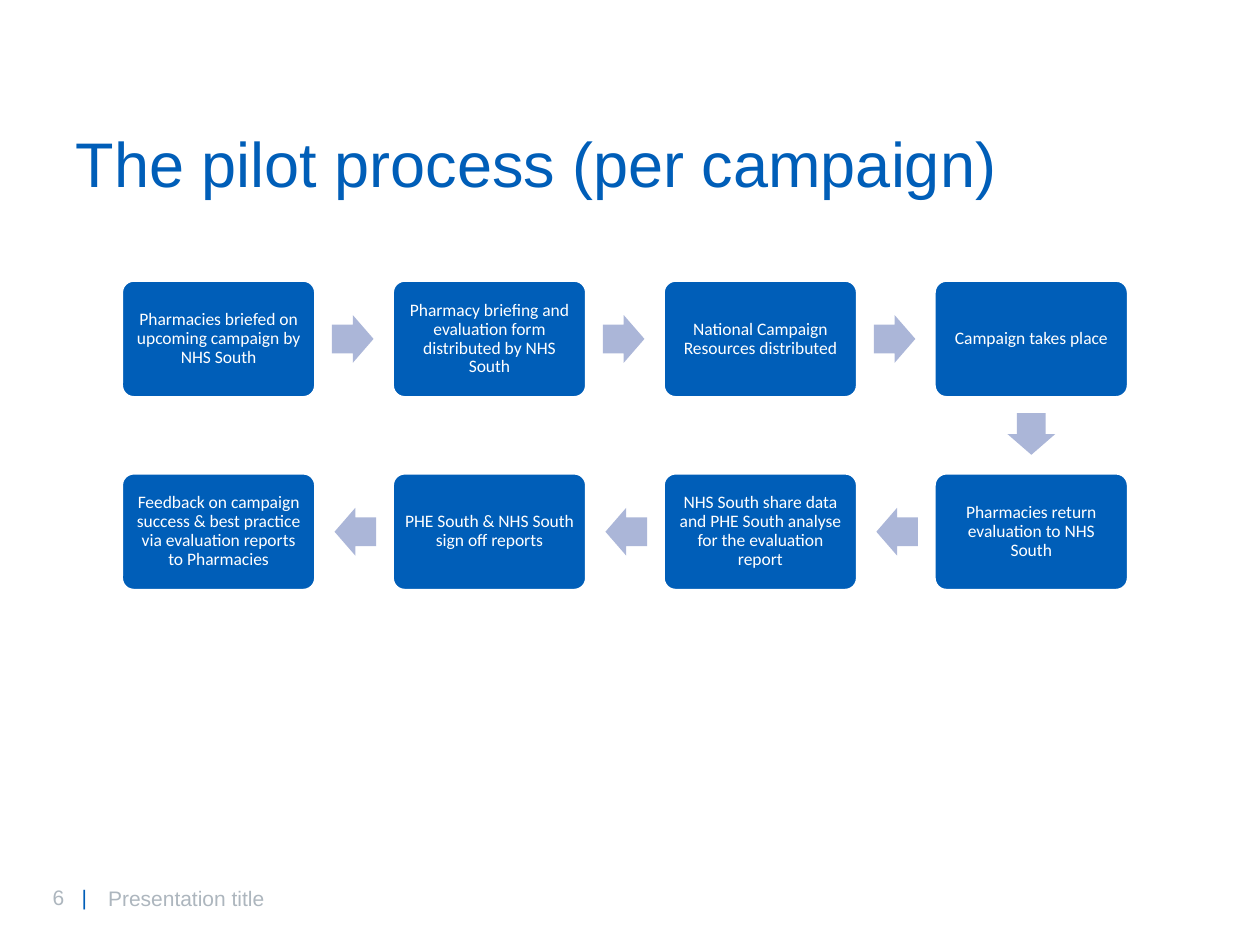
from lxml import etree
from pptx import Presentation
from pptx import util as u
from pptx.dml.color import RGBColor
from pptx.enum import shapes, text
from pptx.oxml.ns import qn

BLUE, PALE, GREY, WHITE = "005EB8", "ABB6D8", "ADB6BE", "FFFFFF"
LEFT, TOP = 0.97, 2.23
STEP_X, STEP_Y = 2.15, 1.53
BOX_W, BOX_H = 1.53, 0.92
ARROW_W, ARROW_H = 0.33, 0.38
COLS = 4
STEPS = [
    "Pharmacies briefed on upcoming campaign by NHS South",
    "Pharmacy briefing and evaluation form distributed by NHS South",
    "National Campaign Resources distributed",
    "Campaign takes place",
    "Pharmacies return evaluation to NHS South",
    "NHS South share data and PHE South analyse for the evaluation report",
    "PHE South & NHS South sign off reports",
    "Feedback on campaign success & best practice via evaluation reports\vto Pharmacies",
]


def color(code):
    return RGBColor.from_string(code)


def write(shape, words, size=12, hue=GREY, font="Arial", align="LEFT",
          anchor="TOP", space=1.0, inset=None, tab=None):
    frame = shape.text_frame
    frame.word_wrap = True
    frame.auto_size = text.MSO_AUTO_SIZE.NONE
    frame.vertical_anchor = getattr(text.MSO_ANCHOR, anchor)
    if inset is not None:
        frame.margin_left = frame.margin_right = u.Inches(inset)
        frame.margin_top = frame.margin_bottom = u.Inches(inset)
    para = frame.paragraphs[0]
    para.text = words
    para.alignment = getattr(text.PP_ALIGN, align)
    para.line_spacing = space
    if tab:
        stops = etree.SubElement(para._p.get_or_add_pPr(), qn("a:tabLst"))
        etree.SubElement(stops, qn("a:tab"), pos=str(u.Inches(tab)), algn="l")
    for run in para.runs:
        run.font.size = u.Pt(size)
        run.font.name = font
        run.font.color.rgb = color(hue)
    return para


def label(slide, words, left, top, width, height, **style):
    box = slide.shapes.add_textbox(*map(u.Inches, (left, top, width, height)))
    return write(box, words, **style)


def block(slide, kind, left, top, width, height, fill, line=None):
    shape = slide.shapes.add_shape(kind, *map(u.Inches, (left, top, width, height)))
    shape.shadow.inherit = False
    shape.fill.solid()
    shape.fill.fore_color.rgb = color(fill)
    if line:
        shape.line.color.rgb = color(line)
        shape.line.width = u.Pt(1)
    else:
        shape.line.fill.background()
    return shape


def place(index):
    row, col = divmod(index, COLS)
    if row % 2:
        col = COLS - 1 - col
    return LEFT + col * STEP_X, TOP + row * STEP_Y


def step(slide, index, words):
    box = block(slide, shapes.MSO_SHAPE.ROUNDED_RECTANGLE, *place(index),
                BOX_W, BOX_H, BLUE, WHITE)
    box.adjustments[0] = 0.1
    write(box, words, size=10, hue=WHITE, font="Calibri", align="CENTER",
          anchor="MIDDLE", space=0.9, inset=0.06)


def arrow(slide, index):
    (x, y), (nx, ny) = place(index), place(index + 1)
    mid_x = (x + nx + BOX_W - ARROW_W) / 2
    mid_y = (y + ny + BOX_H - ARROW_H) / 2
    turn = 90 if ny > y else 180 if nx < x else 0
    shift = {0: -0.01, 90: -0.01, 180: 0.01}[turn]
    if turn == 90:
        mid_y += shift
    else:
        mid_x += shift
    shape = block(slide, shapes.MSO_SHAPE.RIGHT_ARROW, mid_x, mid_y,
                  ARROW_W, ARROW_H, PALE)
    shape.adjustments[0] = 0.6
    shape.adjustments[1] = 0.5
    shape.rotation = turn


def title(slide, words):
    head = slide.shapes.title
    head.left, head.top, head.width, head.height = map(
        u.Inches, (0.5, 1.01, 8.43, 0.67))
    write(head, words, size=36, hue=BLUE, space=0.9)


def footer(slide, number, words):
    para = label(slide, number + "\t", 0.32, 6.97, 0.71, 0.3, tab=0.23)
    bar = para.add_run()
    bar.text = "|"
    bar.font.size = u.Pt(12)
    bar.font.name = "Arial"
    bar.font.color.rgb = color(BLUE)
    label(slide, words, 0.76, 6.93, 6.26, 0.4, anchor="MIDDLE")


def main():
    deck = Presentation()
    deck.slide_width, deck.slide_height = u.Inches(10), u.Inches(7.5)
    slide = deck.slides.add_slide(deck.slide_layouts[5])
    title(slide, "The pilot process (per campaign)")
    footer(slide, "6", "Presentation title")
    for index, words in enumerate(STEPS):
        step(slide, index, words)
        if index + 1 < len(STEPS):
            arrow(slide, index)
    deck.save("out.pptx")


if __name__ == "__main__":
    main()
